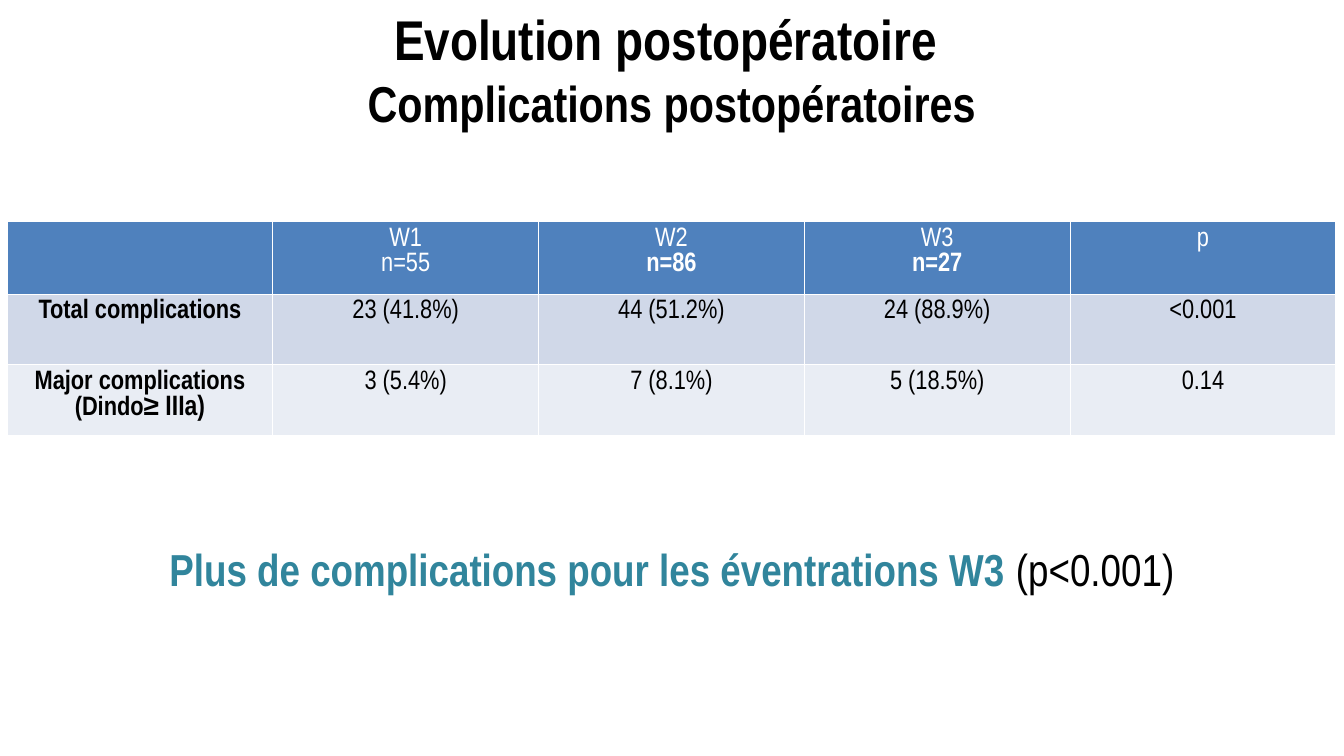
from lxml.etree import SubElement
from pptx import Presentation
from pptx.dml.color import RGBColor
from pptx.enum.text import PP_ALIGN
from pptx.oxml.ns import qn
from pptx.util import Inches, Pt

COLORS = {
    "header": "4F81BD",
    "odd_row": "D0D8E8",
    "even_row": "E9EDF4",
    "accent": "31859C",
    "black": "000000",
    "white": "FFFFFF",
}


def write_paragraphs(text_frame, paragraphs):
    """Fill the frame; each paragraph is a list of (text, size, bold, color) runs."""
    text_frame.word_wrap = True
    for index, runs in enumerate(paragraphs):
        paragraph = text_frame.paragraphs[0] if index == 0 else text_frame.add_paragraph()
        paragraph.alignment = PP_ALIGN.CENTER
        for text, size, bold, color in runs:
            run = paragraph.add_run()
            run.text = text
            run.font.name = "Arial Narrow"
            run.font.size = Pt(size)
            run.font.bold = bold
            run.font.color.rgb = RGBColor.from_string(COLORS[color])


def add_cell_borders(cell):
    properties = cell._tc.get_or_add_tcPr()
    for position, side in enumerate(("lnL", "lnR", "lnT", "lnB")):
        line = SubElement(properties, qn(f"a:{side}"), w=str(Pt(1)))
        fill = SubElement(line, qn("a:solidFill"))
        SubElement(fill, qn("a:srgbClr"), val=COLORS["white"])
        properties.insert(position, line)


presentation = Presentation()
presentation.slide_width = Inches(13.33)
presentation.slide_height = Inches(7.5)
slide = presentation.slides.add_slide(presentation.slide_layouts[6])

# Complications table
header = [[]] + [
    [[(group, 19, False, "white")], [(count, 19, bold, "white")]]
    for group, count, bold in (("W1", "n=55", False), ("W2", "n=86", True), ("W3", "n=27", True))
] + [[[("p", 19, False, "white")]]]
results = [
    ([[("Total complications", 19, True, "black")]],
     ["23 (41.8%)", "44 (51.2%)", "24 (88.9%)", "<0.001"]),
    ([[("Major complications", 19, True, "black")],
      [("(Dindo", 19, True, "black"), ("≥ IIIa)", 20, True, "black")]],
     ["3 (5.4%)", "7 (8.1%)", "5 (18.5%)", "0.14"]),
]
rows = [header] + [
    [label] + [[[(value, 19, False, "black")]] for value in values]
    for label, values in results
]
row_heights = (0.72, 0.7, 0.7)
row_fills = ("header", "odd_row", "even_row")

table = slide.shapes.add_table(
    len(rows), len(header), Inches(0.07), Inches(2.2), Inches(13.18), Inches(sum(row_heights))
).table
for column in table.columns:
    column.width = Inches(13.18 / len(header))
for row_index, row in enumerate(rows):
    table.rows[row_index].height = Inches(row_heights[row_index])
    for column_index, paragraphs in enumerate(row):
        cell = table.cell(row_index, column_index)
        cell.margin_left = cell.margin_right = Inches(0.13)
        cell.margin_top = cell.margin_bottom = Inches(0.05)
        cell.fill.solid()
        cell.fill.fore_color.rgb = RGBColor.from_string(COLORS[row_fills[row_index]])
        add_cell_borders(cell)
        write_paragraphs(cell.text_frame, paragraphs)

# Title and conclusion, both across the full slide width
full_width_texts = [
    (0, 1.38, [
        [("Evolution postopératoire ", 40, True, "black")],
        [("Complications postopératoires", 36, True, "black")],
    ]),
    (5.32, 1.18, [
        [("Plus de complications pour les éventrations W3 ", 32, True, "accent"),
         ("(p<0.001)", 32, False, "black")],
    ]),
]
for top, height, paragraphs in full_width_texts:
    text_box = slide.shapes.add_textbox(0, Inches(top), presentation.slide_width, Inches(height))
    write_paragraphs(text_box.text_frame, paragraphs)

presentation.save("out.pptx")
